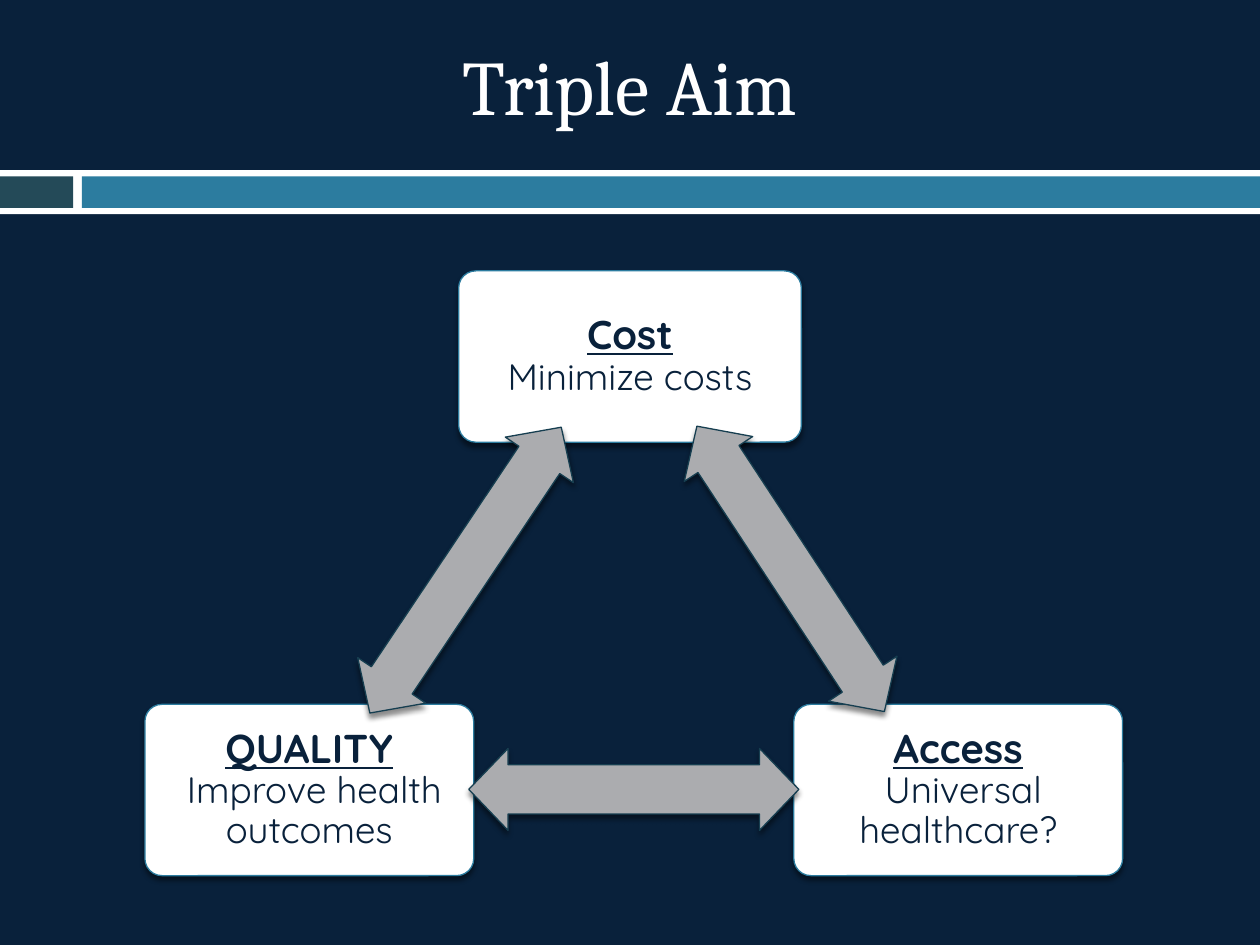
from lxml import etree
from pptx import Presentation
from pptx.dml.color import RGBColor
from pptx.enum.shapes import MSO_SHAPE as SHAPE
from pptx.enum.text import MSO_ANCHOR as ANCHOR, PP_ALIGN as ALIGN
from pptx.oxml.ns import nsdecls, qn
from pptx.util import Inches, Pt

NAVY = RGBColor(0x09, 0x21, 0x3B)
WHITE = RGBColor(0xFF, 0xFF, 0xFF)
SLATE = RGBColor(0x24, 0x4A, 0x58)
BLUE = RGBColor(0x2C, 0x7C, 0x9F)
GREY = RGBColor(0xAB, 0xAC, 0xAF)
EDGE = RGBColor(0x16, 0x3E, 0x50)

TITLE = dict(name="Cambria", size=Pt(44))
HEADING = dict(name="Quicksand", size=Pt(23), bold=True, underline=True)
BODY = dict(name="Quicksand", size=Pt(21), bold=False, underline=False)

SHADOW = (
    f'<a:outerShdw {nsdecls("a")} blurRad="{Pt(3)}" dist="{Pt(2.4)}" '
    'dir="5400000" rotWithShape="0"><a:srgbClr val="000000">'
    '<a:alpha val="45000"/></a:srgbClr></a:outerShdw>'
)


def add_run(p, text, color, fmt):
    r = p.add_run()
    r.text = text
    r.font.color.rgb = color
    for key, value in fmt.items():
        setattr(r.font, key, value)


def add_shape(s, kind, box, fill, line=None):
    """Filled shape; an outlined one also gets a soft shadow below it."""
    sp = s.shapes.add_shape(kind, *map(Inches, box))
    sp.fill.solid()
    sp.fill.fore_color.rgb = fill
    sp.shadow.inherit = False
    if line is None:
        sp.line.fill.background()
    else:
        sp.line.color.rgb = line
        sp.line.width = Pt(0.75)
        effects = sp._element.spPr.find(qn("a:effectLst"))
        effects.append(etree.fromstring(SHADOW))
    return sp


def add_band(s, left, top, width, height):
    """White band holding a short and a long coloured bar."""
    rim, short, gap = 0.05, 0.58, 0.07
    start = short + gap
    bar_top, bar_height = top + rim, height - 2 * rim
    add_shape(s, SHAPE.RECTANGLE, (left, top, width, height), WHITE)
    add_shape(s, SHAPE.RECTANGLE, (left, bar_top, short, bar_height), SLATE)
    add_shape(s, SHAPE.RECTANGLE,
              (left + start, bar_top, width - start, bar_height), BLUE)


def add_title(s, box, text):
    tf = s.shapes.add_textbox(*map(Inches, box)).text_frame
    tf.word_wrap = True
    tf.vertical_anchor = ANCHOR.MIDDLE
    p = tf.paragraphs[0]
    p.alignment = ALIGN.CENTER
    add_run(p, text, WHITE, TITLE)


def add_card(s, box, heading, body):
    sp = add_shape(s, SHAPE.ROUNDED_RECTANGLE, box, WHITE, BLUE)
    sp.adjustments[0] = 0.1
    tf = sp.text_frame
    tf.word_wrap = True
    tf.vertical_anchor = ANCHOR.MIDDLE
    for side in ("left", "right", "top", "bottom"):
        setattr(tf, f"margin_{side}", Inches(0.1))
    p = tf.paragraphs[0]
    p.alignment = ALIGN.CENTER
    p.line_spacing = 0.9
    add_run(p, heading, NAVY, HEADING)
    p.add_line_break()
    add_run(p, body, NAVY, BODY)


def add_arrow(s, box, angle):
    sp = add_shape(s, SHAPE.LEFT_RIGHT_ARROW, box, GREY, EDGE)
    sp.adjustments[0] = 0.6
    sp.adjustments[1] = 0.48
    sp.rotation = angle


def add_triangle(s, left, top, width, height):
    """Three cards at the corners, joined by double arrows."""
    card_w, card_h = 2.61, 1.36
    top_w = 2.72
    low = top + height - card_h
    cards = [
        (left + (width - top_w) / 2 - 0.03, top, top_w,
         "Cost", "Minimize costs"),
        (left + width - card_w, low, card_w,
         "Access", " Universal healthcare?"),
        (left, low, card_w, "QUALITY", " Improve health outcomes"),
    ]
    for x, y, w, heading, body in cards:
        add_card(s, (x, y, w, card_h), heading, body)

    arrows = [(3.77, 2.04, 2.71, 56.7), (2.57, 3.79, 2.62, 0),
              (1.18, 2.05, 2.73, 303.8)]
    for dx, dy, length, angle in arrows:
        add_arrow(s, (left + dx, top + dy, length, 0.65), angle)


def main():
    prs = Presentation()
    prs.slide_width, prs.slide_height = Inches(10), Inches(7.5)
    s = prs.slides.add_slide(prs.slide_layouts[6])
    s.background.fill.solid()
    s.background.fill.fore_color.rgb = NAVY

    add_band(s, 0, 1.35, 10, 0.35)
    add_title(s, (0.5, -0.02, 9, 1.38), "Triple Aim")
    add_triangle(s, 1.15, 2.15, 7.76, 4.8)
    prs.save("out.pptx")


if __name__ == "__main__":
    main()
